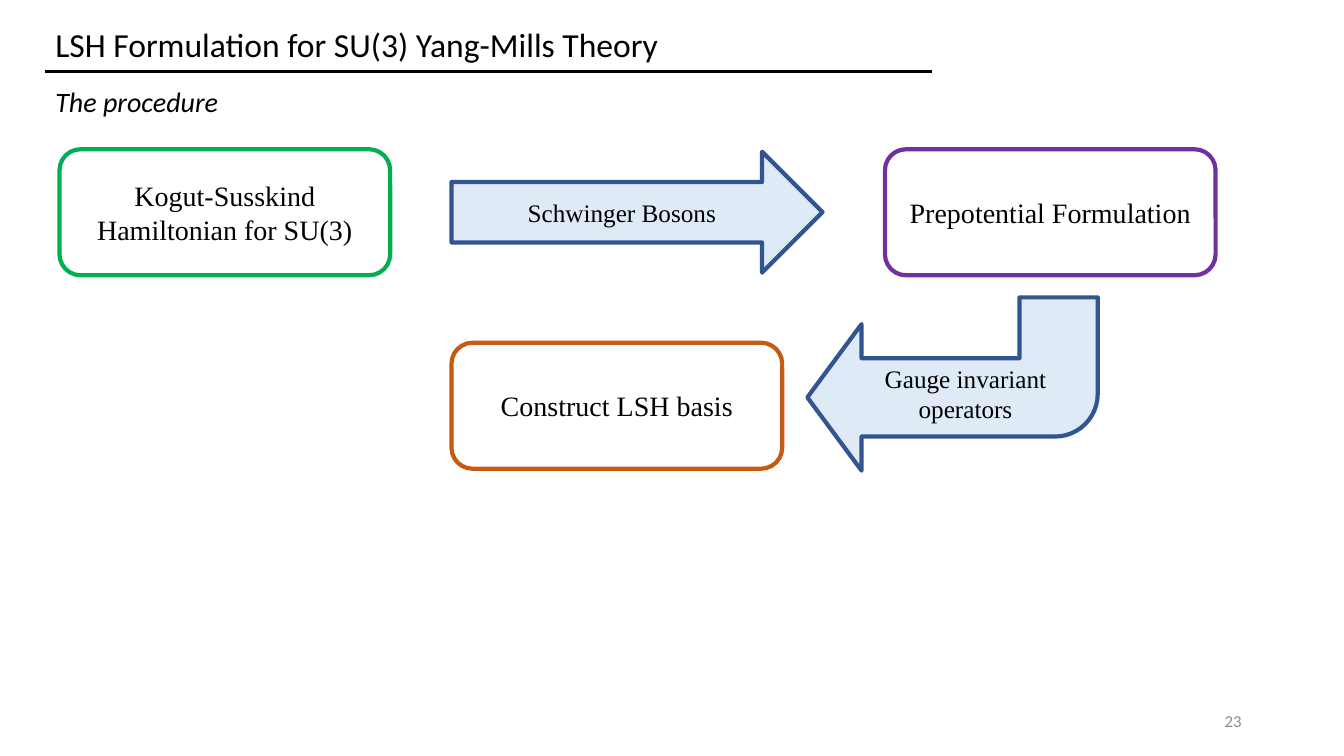
import pptx
import pptx.dml.color
import pptx.enum.shapes
import pptx.enum.text
import pptx.oxml
import pptx.oxml.ns
import pptx.util

Pt = pptx.util.Pt
RGB = pptx.dml.color.RGBColor
SHAPE = pptx.enum.shapes.MSO_SHAPE
ALIGN = pptx.enum.text.PP_ALIGN
ANCHOR = pptx.enum.text.MSO_ANCHOR

BLACK = RGB(0x00, 0x00, 0x00)
WHITE = RGB(0xFF, 0xFF, 0xFF)
GREY = RGB(0x8C, 0x8C, 0x8C)
GREEN = RGB(0x00, 0xB0, 0x50)
PURPLE = RGB(0x70, 0x30, 0xA0)
ORANGE = RGB(0xC5, 0x5A, 0x11)
PALE_BLUE = RGB(0xDE, 0xEB, 0xF7)
BLUE = RGB(0x32, 0x54, 0x91)

SANS, SERIF = "Calibri", "Times New Roman"
TITLE = {"name": SANS, "size": Pt(24)}
SUBTITLE = {"name": SANS, "size": Pt(20), "italic": True}
NUMBER = {"name": SANS, "size": Pt(12)}
STAGE = {"name": SERIF, "size": Pt(20)}
STEP = {"name": SERIF, "size": Pt(18)}


def write(sp, text, fmt, align=ALIGN.LEFT, color=BLACK, anchor=ANCHOR.MIDDLE):
    tf = sp.text_frame
    tf.word_wrap = True
    tf.vertical_anchor = anchor
    p = tf.paragraphs[0]
    p.alignment = align
    r = p.add_run()
    r.text = text
    for key, value in fmt.items():
        setattr(r.font, key, value)
    r.font.color.rgb = color
    return p


def add_text(s, x, y, w, h, *args, **kwargs):
    sp = s.shapes.add_textbox(Pt(x), Pt(y), Pt(w), Pt(h))
    return write(sp, *args, **kwargs)


def add_block(s, kind, x, y, w, h, fill, line):
    sp = s.shapes.add_shape(kind, Pt(x), Pt(y), Pt(w), Pt(h))
    sp.shadow.inherit = False
    sp.fill.solid()
    sp.fill.fore_color.rgb = fill
    sp.line.color.rgb = line
    sp.line.width = Pt(3)
    return sp


def add_header(s, x, y, w, h):
    title_h = h / 2
    p = add_text(s, x, y, w, title_h,
                 "LSH Formulation for SU(3) Yang-Mills Theory", TITLE)
    p.line_spacing = 0.9
    rule_y = Pt(y + title_h)
    rule = s.shapes.add_connector(pptx.enum.shapes.MSO_CONNECTOR.STRAIGHT,
                                  Pt(x), rule_y, Pt(x + w), rule_y)
    rule.line.color.rgb = BLACK
    rule.line.width = Pt(2.25)
    rule._element.spPr.append(pptx.oxml.parse_xml(
        "<a:effectLst %s/>" % pptx.oxml.ns.nsdecls("a")))
    add_text(s, x, y + h - 27.5, w, 27.5, "The procedure", SUBTITLE)


def add_flow(s, x, y, w, h):
    stage_w, stage_h = 236.2, 90
    middle = x + 280
    right = x + w - stage_w
    bottom = y + h - stage_h
    stages = [
        ("Kogut-Susskind Hamiltonian for SU(3)", x, y, GREEN),
        ("Prepotential Formulation", right, y, PURPLE),
        ("Construct LSH basis", middle, bottom, ORANGE),
    ]
    for text, left, top, color in stages:
        sp = add_block(s, SHAPE.ROUNDED_RECTANGLE, left, top,
                       stage_w, stage_h, WHITE, color)
        write(sp, text, STAGE, ALIGN.CENTER)

    arrow_h = 86.4
    sp = add_block(s, SHAPE.RIGHT_ARROW, middle, y + (stage_h - arrow_h) / 2,
                   265, arrow_h, PALE_BLUE, BLUE)
    write(sp, "Schwinger Bosons", STEP, ALIGN.CENTER)

    turn_x, turn_y = middle + stage_w + 18, y + stage_h + 15.8
    sp = add_block(s, SHAPE.BENT_ARROW, turn_x, turn_y, 207.4, 123.8,
                   PALE_BLUE, BLUE)
    sp.rotation = 180
    for i, value in enumerate((0.452, 0.423, 0.313, 0.246)):
        sp.adjustments[i] = value
    add_text(s, turn_x + 37.4, turn_y + 43.2, 151.2, 51,
             "Gauge invariant operators", STEP, ALIGN.CENTER,
             anchor=ANCHOR.TOP)


def add_page_number(s, x, y, w, h):
    add_text(s, x, y, w, h, "23", NUMBER, ALIGN.RIGHT, GREY)


def main():
    prs = pptx.Presentation()
    prs.slide_width, prs.slide_height = Pt(960), Pt(540)
    s = prs.slides.add_slide(prs.slide_layouts[6])
    add_header(s, 32.4, 15.8, 633, 70.2)
    add_flow(s, 42.5, 106.6, 825.8, 228.2)
    add_page_number(s, 678, 500.5, 216, 28.8)
    prs.save("out.pptx")


if __name__ == "__main__":
    main()
